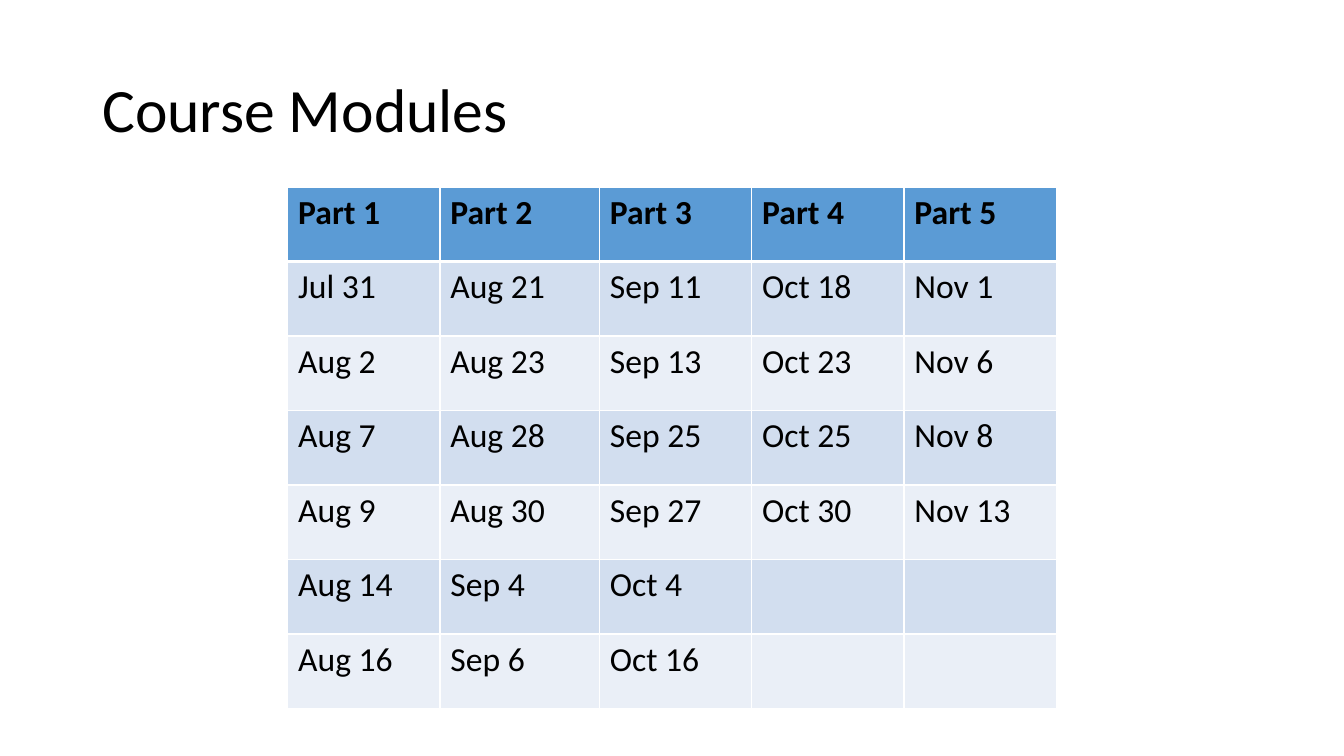
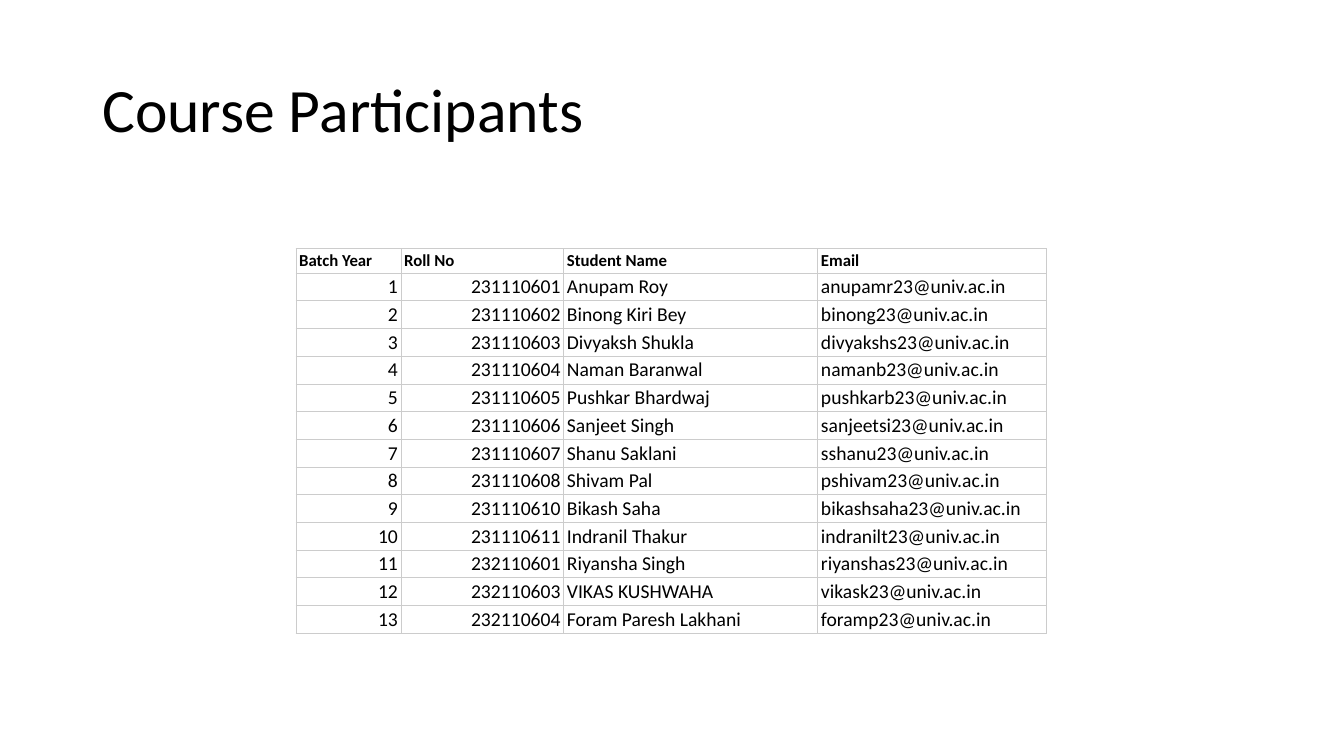
"""Build two course slides: the module calendar and the participant list."""
from dataclasses import dataclass
from itertools import zip_longest

from pptx import Presentation
from pptx import util as u
from pptx.dml.color import RGBColor
from pptx.enum import text as t
from pptx.oxml import parse_xml
from pptx.oxml.ns import nsdecls
from pptx.slide import Slide
from pptx.table import _Cell
from pptx.text.text import TextFrame

EMU_PER_PX = 9525
BLANK_LAYOUT = 6


@dataclass(frozen=True)
class Theme:
    """Colours, font and type sizes shared by the slides."""
    font: str = "Calibri"
    ink: str = "000000"
    white: str = "FFFFFF"
    header: str = "5B9BD5"
    bands: tuple[str, str] = ("D2DEEF", "EAEFF7")
    grid: str = "CCCCCC"
    title_size: int = 44
    module_size: int = 24
    participant_size: int = 14
    participant_header_size: int = 12


THEME = Theme()


@dataclass(frozen=True)
class TableSpec:
    """Content, geometry in px and format of one table."""
    left: int
    top: int
    columns: tuple[int, ...]
    row_height: int
    rows: list[tuple[str, ...]]
    size: int
    header_size: int
    border: str
    border_width: float
    header_border_width: float
    margins: tuple[int, int]
    anchor: t.MSO_ANCHOR
    header_fill: str | None = None
    bands: tuple[str, ...] = ()
    right_columns: tuple[int, ...] = ()


MODULES = [
    ("Part 1", "Jul 31", "Aug 2", "Aug 7", "Aug 9", "Aug 14", "Aug 16"),
    ("Part 2", "Aug 21", "Aug 23", "Aug 28", "Aug 30", "Sep 4", "Sep 6"),
    ("Part 3", "Sep 11", "Sep 13", "Sep 25", "Sep 27", "Oct 4", "Oct 16"),
    ("Part 4", "Oct 18", "Oct 23", "Oct 25", "Oct 30"),
    ("Part 5", "Nov 1", "Nov 6", "Nov 8", "Nov 13"),
]

EMAIL_DOMAIN = "univ.ac.in"
PARTICIPANTS = [
    ("231110601", "Anupam Roy", "anupamr23"),
    ("231110602", "Binong Kiri Bey", "binong23"),
    ("231110603", "Divyaksh Shukla", "divyakshs23"),
    ("231110604", "Naman Baranwal", "namanb23"),
    ("231110605", "Pushkar Bhardwaj", "pushkarb23"),
    ("231110606", "Sanjeet Singh", "sanjeetsi23"),
    ("231110607", "Shanu Saklani", "sshanu23"),
    ("231110608", "Shivam Pal", "pshivam23"),
    ("231110610", "Bikash Saha", "bikashsaha23"),
    ("231110611", "Indranil Thakur", "indranilt23"),
    ("232110601", "Riyansha Singh", "riyanshas23"),
    ("232110603", "VIKAS KUSHWAHA", "vikask23"),
    ("232110604", "Foram Paresh Lakhani", "foramp23"),
]

MODULE_TABLE = TableSpec(
    left=274, top=178, columns=(145, 152, 145, 145, 145), row_height=71,
    rows=list(zip_longest(*MODULES, fillvalue="")),
    size=THEME.module_size, header_size=THEME.module_size,
    border=THEME.white, border_width=1, header_border_width=3,
    margins=(10, 5), anchor=t.MSO_ANCHOR.TOP,
    header_fill=THEME.header, bands=THEME.bands,
)

PARTICIPANT_TABLE = TableSpec(
    left=282, top=237, columns=(100, 155, 242, 218), row_height=21,
    rows=[("Batch Year", "Roll No", "Student Name", "Email")] + [
        (str(number), roll, name, f"{user}@{EMAIL_DOMAIN}")
        for number, (roll, name, user) in enumerate(PARTICIPANTS, start=1)
    ],
    size=THEME.participant_size, header_size=THEME.participant_header_size,
    border=THEME.grid, border_width=0.75, header_border_width=0.75,
    margins=(3, 2), anchor=t.MSO_ANCHOR.BOTTOM, right_columns=(0, 1),
)


def px(length: int) -> u.Emu:
    """Turn whole px into EMU."""
    return u.Emu(length * EMU_PER_PX)


def write_text(frame: TextFrame, content: str, *, size: int, bold: bool = False,
               align: t.PP_ALIGN = t.PP_ALIGN.LEFT, line_spacing: float = 1.0) -> None:
    """Write one formatted paragraph into a text frame."""
    paragraph = frame.paragraphs[0]
    paragraph.alignment = align
    paragraph.line_spacing = line_spacing
    run = paragraph.add_run()
    run.text = content
    run.font.name = THEME.font
    run.font.size = u.Pt(size)
    run.font.bold = bold
    run.font.color.rgb = RGBColor.from_string(THEME.ink)


def add_title(slide: Slide, title: str) -> None:
    """Add the shared slide title."""
    frame = slide.shapes.add_textbox(px(88), px(38), px(1104), px(139)).text_frame
    frame.word_wrap = True
    frame.vertical_anchor = t.MSO_ANCHOR.MIDDLE
    write_text(frame, title, size=THEME.title_size, line_spacing=0.9)


def set_borders(cell: _Cell, colour: str, widths: dict[str, float]) -> None:
    """Draw the cell edges, keyed by side in schema order."""
    properties = cell._tc.get_or_add_tcPr()
    for position, (side, width) in enumerate(widths.items()):
        properties.insert(position, parse_xml(
            f'<a:ln{side} {nsdecls("a")} w="{u.Pt(width)}"><a:solidFill>'
            f'<a:srgbClr val="{colour}"/></a:solidFill></a:ln{side}>'))


def format_cell(cell: _Cell, spec: TableSpec, row: int, column: int) -> None:
    """Fill, frame and write one table cell."""
    is_header = row == 0
    cell.margin_left = cell.margin_right = px(spec.margins[0])
    cell.margin_top = cell.margin_bottom = px(spec.margins[1])
    cell.vertical_anchor = spec.anchor
    band = spec.bands[(row - 1) % len(spec.bands)] if spec.bands else None
    colour = spec.header_fill if is_header else band
    if colour:
        cell.fill.solid()
        cell.fill.fore_color.rgb = RGBColor.from_string(colour)
    else:
        cell.fill.background()
    thin, thick = spec.border_width, spec.header_border_width
    set_borders(cell, spec.border, {
        "L": thin, "R": thin,
        "T": thick if row == 1 else thin,
        "B": thick if is_header else thin,
    })
    content = spec.rows[row][column]
    if content:
        to_right = not is_header and column in spec.right_columns
        write_text(cell.text_frame, content, bold=is_header,
                   size=spec.header_size if is_header else spec.size,
                   align=t.PP_ALIGN.RIGHT if to_right else t.PP_ALIGN.LEFT)


def add_table(slide: Slide, spec: TableSpec) -> None:
    """Add a table as its spec describes."""
    row_count, column_count = len(spec.rows), len(spec.columns)
    table = slide.shapes.add_table(
        row_count, column_count, px(spec.left), px(spec.top),
        px(sum(spec.columns)), px(spec.row_height * row_count)).table
    table.first_row = table.horz_banding = False
    for column, width in zip(table.columns, spec.columns):
        column.width = px(width)
    for row in range(row_count):
        table.rows[row].height = px(spec.row_height)
        for column in range(column_count):
            format_cell(table.cell(row, column), spec, row, column)


def main() -> None:
    """Build and save the presentation."""
    presentation = Presentation()
    presentation.slide_width, presentation.slide_height = px(1280), px(720)
    for title, spec in (("Course Modules", MODULE_TABLE),
                        ("Course Participants", PARTICIPANT_TABLE)):
        slide = presentation.slides.add_slide(presentation.slide_layouts[BLANK_LAYOUT])
        add_title(slide, title)
        add_table(slide, spec)
    presentation.save("out.pptx")


if __name__ == "__main__":
    main()
